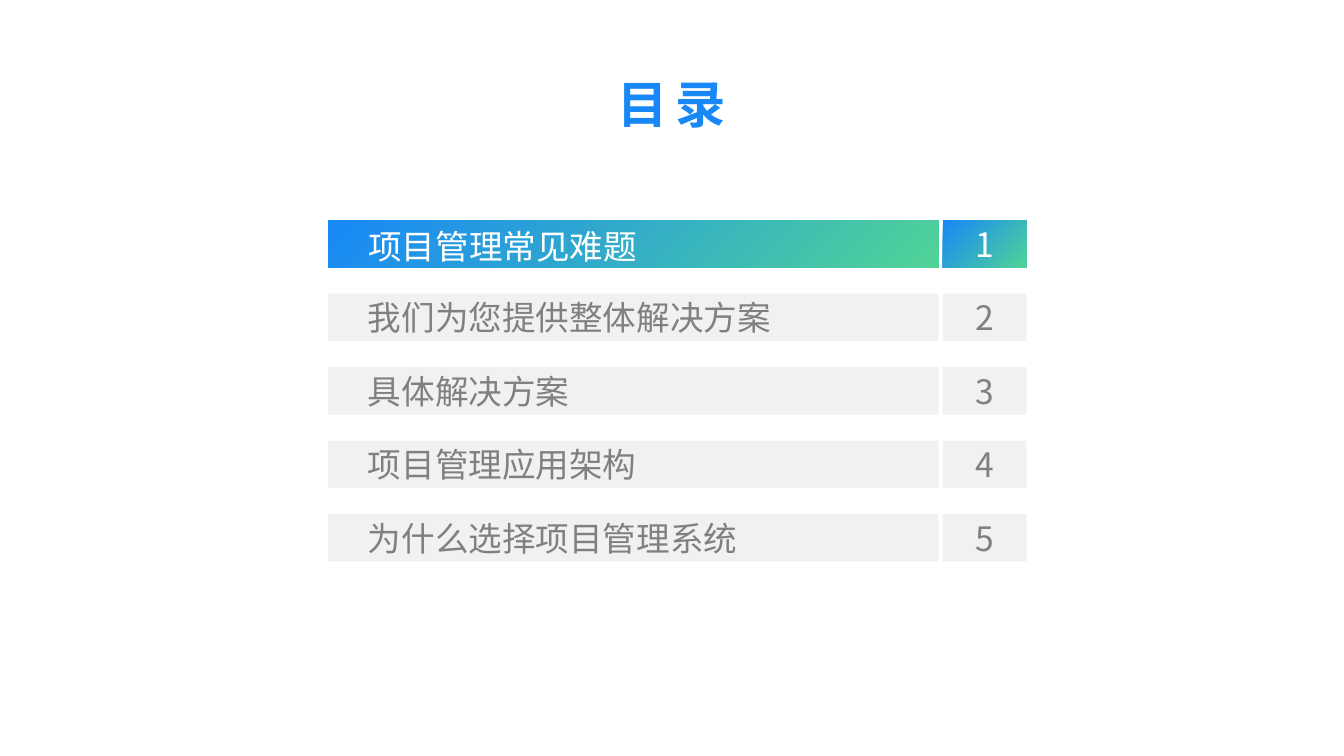
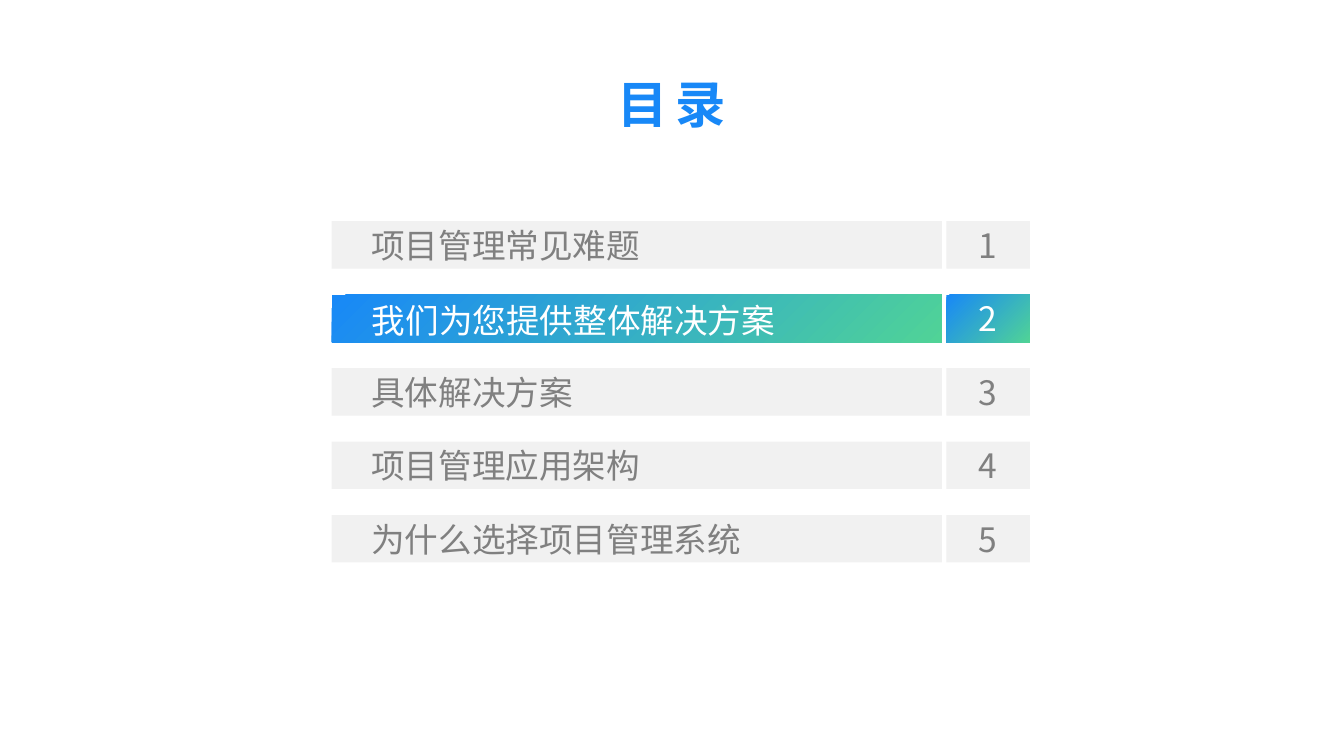
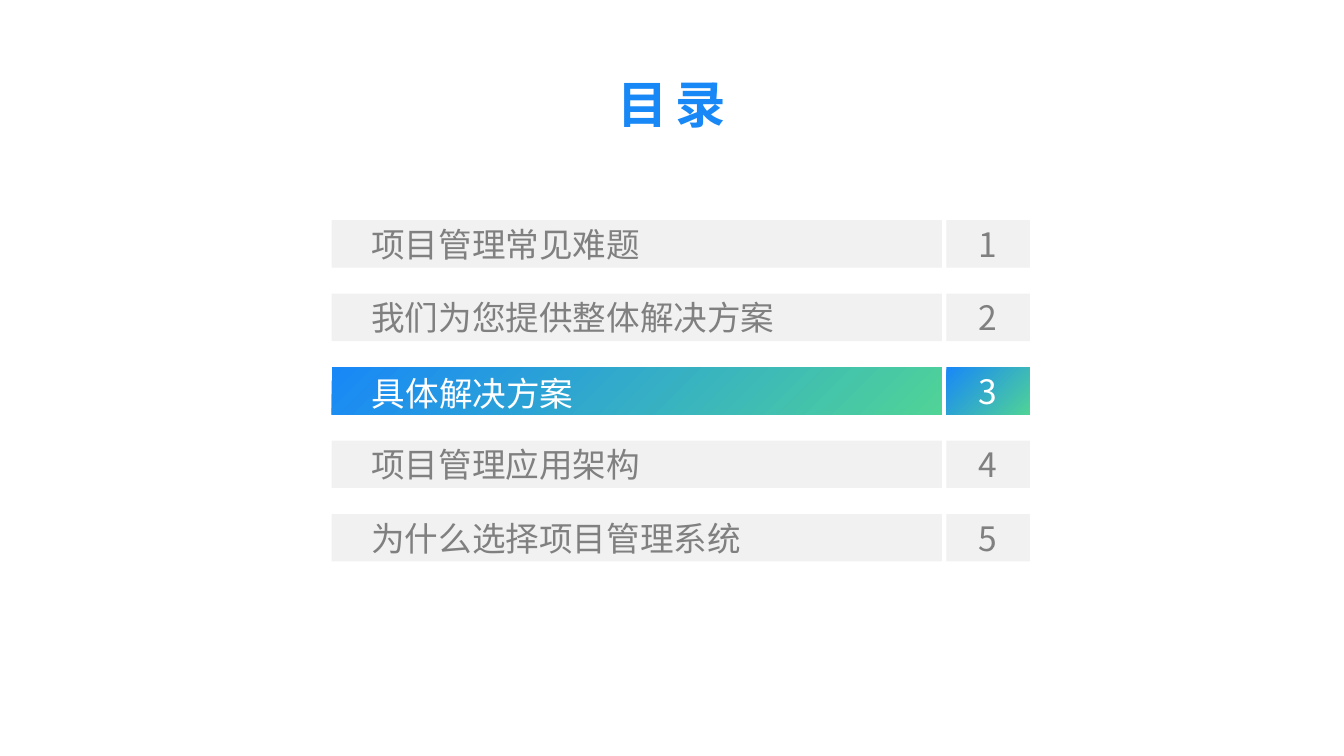
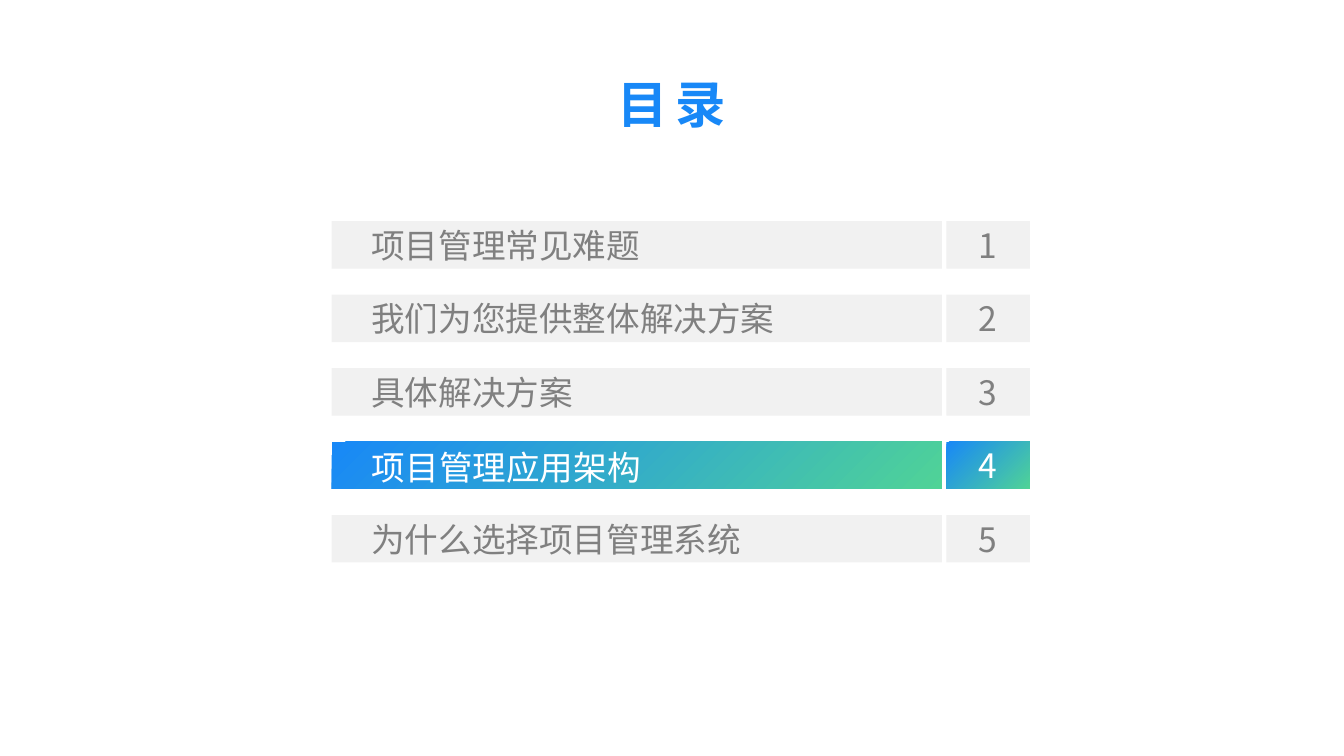
from dataclasses import dataclass

from lxml import etree
from pptx import Presentation
from pptx.dml.color import RGBColor
from pptx.enum.shapes import MSO_SHAPE
from pptx.enum.text import MSO_ANCHOR, MSO_AUTO_SIZE, PP_ALIGN
from pptx.oxml.ns import qn
from pptx.util import Inches, Pt

RECT = MSO_SHAPE.RECTANGLE
MIDDLE = MSO_ANCHOR.MIDDLE
GROW = MSO_AUTO_SIZE.SHAPE_TO_FIT_TEXT
LEFT, CENTER = PP_ALIGN.LEFT, PP_ALIGN.CENTER


@dataclass(frozen=True)
class Theme:
    font: str = "Noto Sans CJK JP"
    title: int = 72
    body: int = 48
    blend: tuple = ("1888F7", "50D397")
    band: str = "F1F1F1"
    grey: str = "808080"
    white: str = "FFFFFF"


THEME = Theme()

# Agenda grid, in inches
BAR_W, NUM_W, ROW_H = 12.11, 1.66, 0.94
NUM_DX = 12.2
SPAN = 5.83  # from the first row to the last
ACTIVE_PAD = (0.8, 0.06, 0.06, 0.06)
PLAIN_PAD = (0.79, 0.05, 0.1, 0.05)
NUM_PAD = (0.1, 0.05, 0.1, 0.05)

TOPICS = [
    "项目管理常见难题",
    "我们为您提供整体解决方案",
    "具体解决方案",
    "项目管理应用架构",
    "为什么选择项目管理系统",
]
# Left and top of the agenda on each slide
ORIGINS = [(6.51, 4.37), (6.58, 4.39), (6.58, 4.37), (6.58, 4.39)]


def paint(fill, color, angle=0):
    """Fill with one colour, or with a gradient when given a pair."""
    if isinstance(color, str):
        fill.solid()
        fill.fore_color.rgb = RGBColor.from_string(color)
        return
    fill.gradient()
    fill.gradient_angle = angle
    for stop, tone in zip(fill.gradient_stops, color):
        stop.color.rgb = RGBColor.from_string(tone)


def write(frame, text, size, color, pad, align=LEFT, bold=False,
          line=None, track=None):
    """Put one formatted line of text in a frame."""
    frame.word_wrap = True
    frame.vertical_anchor = MIDDLE
    (frame.margin_left, frame.margin_top,
     frame.margin_right, frame.margin_bottom) = map(Inches, pad)
    para = frame.paragraphs[0]
    para.alignment = align
    para.line_spacing = line
    run = para.add_run()
    run.text = text
    font = run.font
    font.name, font.size, font.bold = THEME.font, Pt(size), bold
    paint(font.fill, color)
    props = run._r.get_or_add_rPr()
    etree.SubElement(props, qn("a:ea")).set("typeface", THEME.font)
    if track:
        props.set("spc", str(track * 100))


class Deck:
    def __init__(self, theme):
        self.theme = theme
        self.prs = Presentation()
        self.prs.slide_width = Inches(26.67)
        self.prs.slide_height = Inches(15)
        self.slide = None

    def page(self):
        self.slide = self.prs.slides.add_slide(self.prs.slide_layouts[6])
        paint(self.slide.background.fill, self.theme.white)

    def title(self, text):
        box = self.slide.shapes.add_textbox(
            *map(Inches, (5.94, 1.25, 14.78, 1.49)))
        write(box.text_frame, text, self.theme.title, self.theme.blend,
              (0.1,) * 4, align=CENTER, bold=True, line=1.1, track=12)
        box.text_frame.auto_size = GROW

    def block(self, left, top, width, text, active, **style):
        shape = self.slide.shapes.add_shape(
            RECT, *map(Inches, (left, top, width, ROW_H)))
        shape.shadow.inherit = False
        shape.line.fill.background()
        look = self.theme
        paint(shape.fill, look.blend if active else look.band, angle=315)
        write(shape.text_frame, text, look.body,
              look.white if active else look.grey, **style)

    def row(self, left, top, number, topic, active):
        self.block(left, top, BAR_W, topic, active,
                   pad=ACTIVE_PAD if active else PLAIN_PAD,
                   line=1.1 if active else None)
        self.block(left + NUM_DX, top, NUM_W, str(number), active,
                   pad=NUM_PAD, align=CENTER)

    def agenda(self, left, top, current):
        pitch = SPAN / (len(TOPICS) - 1)
        for i, topic in enumerate(TOPICS):
            self.row(left, top + i * pitch, i + 1, topic, i == current)


def main():
    deck = Deck(THEME)
    # One agenda slide per section, with that section lit
    for current, (left, top) in enumerate(ORIGINS):
        deck.page()
        deck.title("目录")
        deck.agenda(left, top, current)
    deck.prs.save("out.pptx")


if __name__ == "__main__":
    main()
